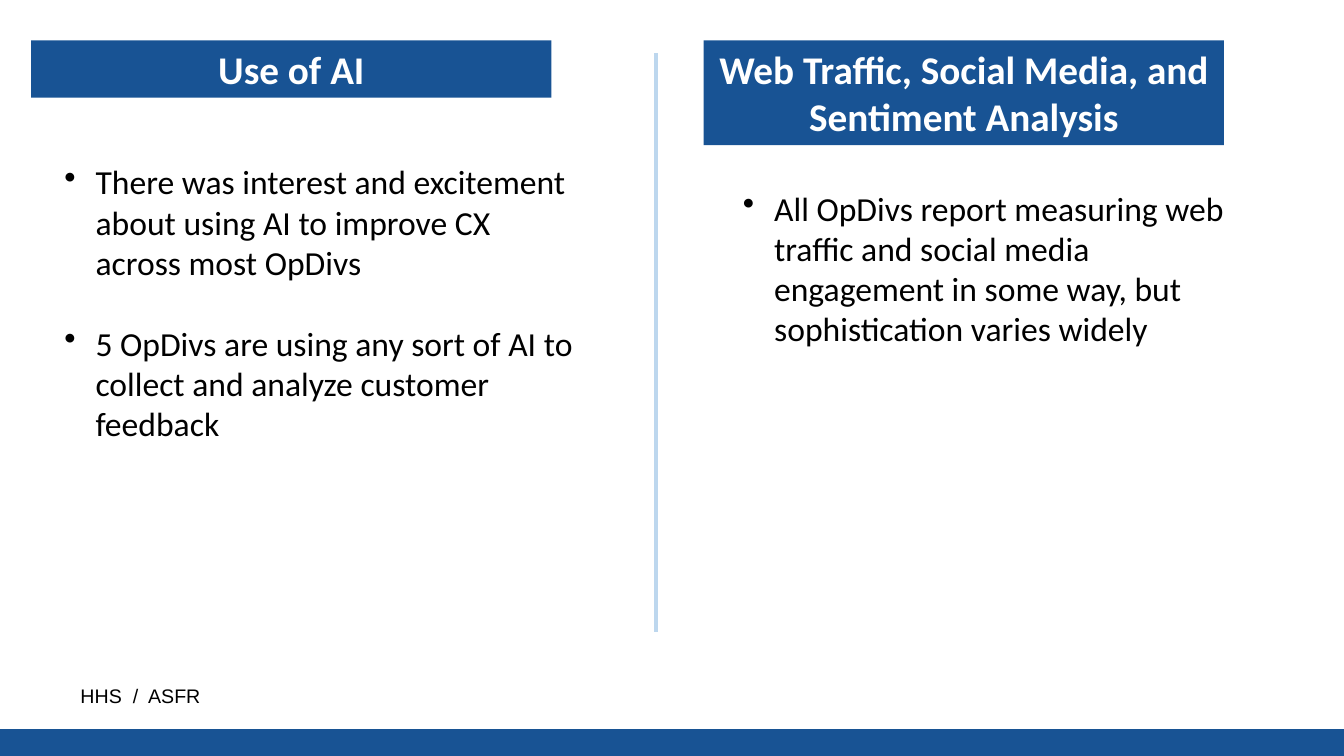
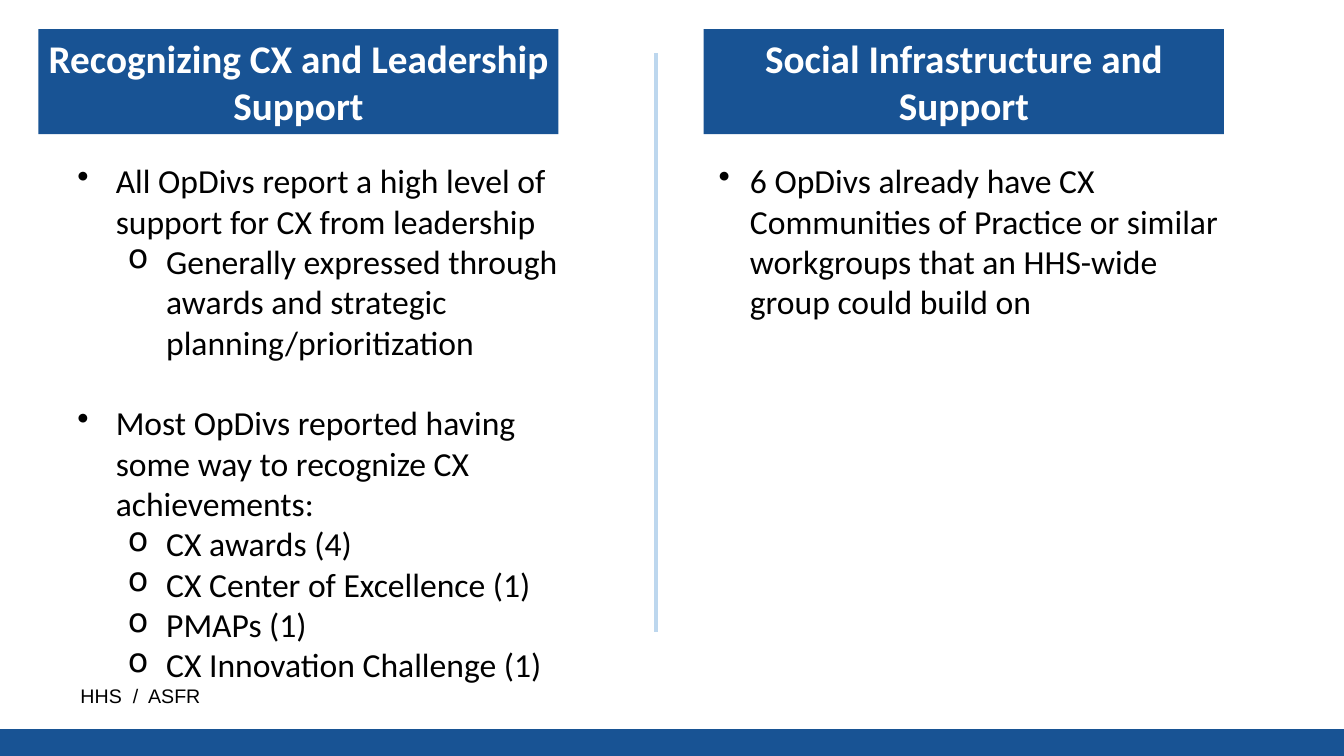
from lxml.etree import SubElement
from pptx import Presentation
from pptx.dml.color import RGBColor
from pptx.enum.shapes import MSO_CONNECTOR as Connector, MSO_SHAPE as Shape
from pptx.enum.text import MSO_ANCHOR as Anchor, PP_ALIGN as Align
from pptx.oxml.ns import qn
from pptx.util import Pt

PX = 9144
BLUE, PALE_BLUE, WHITE, BLACK = "185394", "BDD7EE", "FFFFFF", "000000"
WIDTH, HEIGHT = 1333, 750
HEADING_WIDTH, BODY_WIDTH = 516, 533
BLANK_LINE = 29

SLIDES = [
    [
        {
            "heading": ("Use of AI", 31, 40, 57),
            "body": (54, 155, 293),
            "indent": 31,
            "bullets": [
                (0, 0, "There was interest and excitement about using AI to improve CX across most OpDivs"),
                (0, BLANK_LINE, "5 OpDivs are using any sort of AI to collect and analyze customer feedback"),
            ],
        },
        {
            "heading": ("Web Traffic, Social Media, and Sentiment Analysis", 698, 40, 104),
            "body": (727, 181, 212),
            "indent": 31,
            "bullets": [
                (0, 0, "All OpDivs report measuring web traffic and social media engagement "
                       "in some way, but sophistication varies widely"),
            ],
        },
    ],
    [
        {
            "heading": ("Recognizing CX and Leadership Support", 38, 29, 104),
            "body": (67, 154, 616),
            "indent": 38,
            "bullets": [
                (0, 0, "All OpDivs report a high level of support for CX from leadership"),
                (1, 0, "Generally expressed through awards and strategic planning/prioritization"),
                (0, BLANK_LINE, "Most OpDivs reported having some way to recognize CX achievements:"),
                (1, 0, "CX awards (4)"),
                (1, 0, "CX Center of Excellence (1)"),
                (1, 0, "PMAPs (1)"),
                (1, 0, "CX Innovation Challenge (1)"),
            ],
        },
        {
            "heading": ("Social Infrastructure and Support", 698, 29, 104),
            "body": (703, 154, 212),
            "indent": 31,
            "bullets": [
                (0, 0, "6 OpDivs already have CX Communities of Practice or similar workgroups "
                       "that an HHS-wide group could build on"),
            ],
        },
    ],
]


def color(value):
    return RGBColor.from_string(value)


def write(para, text, font_name, size, text_color, bold=False):
    para.text = text
    para.font.name = font_name
    para.font.size = Pt(size)
    para.font.bold = bold
    para.font.color.rgb = color(text_color)


deck = Presentation()
deck.slide_width = WIDTH * PX
deck.slide_height = HEIGHT * PX

for columns in SLIDES:
    page = deck.slides.add_slide(deck.slide_layouts[6])

    band = page.shapes.add_shape(Shape.RECTANGLE, 0, 724 * PX, WIDTH * PX, 26 * PX)
    band.shadow.inherit = False
    band.fill.solid()
    band.fill.fore_color.rgb = color(BLUE)
    band.line.color.rgb = color(BLUE)
    band.line.width = Pt(1)

    footer = page.shapes.add_textbox(70 * PX, 674 * PX, 667 * PX, 34 * PX)
    footer.text_frame.word_wrap = True
    write(footer.text_frame.paragraphs[0], "HHS  /  ASFR", "Arial", 14, BLACK)

    divider = page.shapes.add_connector(Connector.STRAIGHT, 651 * PX, 53 * PX, 651 * PX, 627 * PX)
    divider.line.color.rgb = color(PALE_BLUE)
    divider.line.width = Pt(3)
    SubElement(divider._element.spPr, qn("a:effectLst"))

    for column in columns:
        title, left, top, height = column["heading"]
        heading = page.shapes.add_shape(
            Shape.RECTANGLE, left * PX, top * PX, HEADING_WIDTH * PX, height * PX)
        heading.shadow.inherit = False
        heading.fill.solid()
        heading.fill.fore_color.rgb = color(BLUE)
        heading.line.fill.background()
        frame = heading.text_frame
        frame.word_wrap = True
        frame.margin_left = frame.margin_right = 5 * PX
        frame.vertical_anchor = Anchor.TOP
        frame.paragraphs[0].alignment = Align.CENTER
        write(frame.paragraphs[0], title, "Calibri", 28, WHITE, bold=True)

        left, top, height = column["body"]
        box = page.shapes.add_textbox(left * PX, top * PX, BODY_WIDTH * PX, height * PX)
        frame = box.text_frame
        frame.word_wrap = True
        for index, (level, gap, text) in enumerate(column["bullets"]):
            para = frame.add_paragraph() if index else frame.paragraphs[0]
            write(para, text, "Calibri", 24, BLACK)
            para.level = level
            para.space_before = Pt(gap)
            properties = para._p.get_or_add_pPr()
            properties.set("marL", str((column["indent"] + 50 * level) * PX))
            properties.set("indent", str(-column["indent"] * PX))
            bullet = properties.makeelement(qn("a:buChar"), {"char": "•o"[level]})
            properties.insert_element_before(bullet, "a:tabLst", "a:defRPr", "a:extLst")

deck.save("out.pptx")
